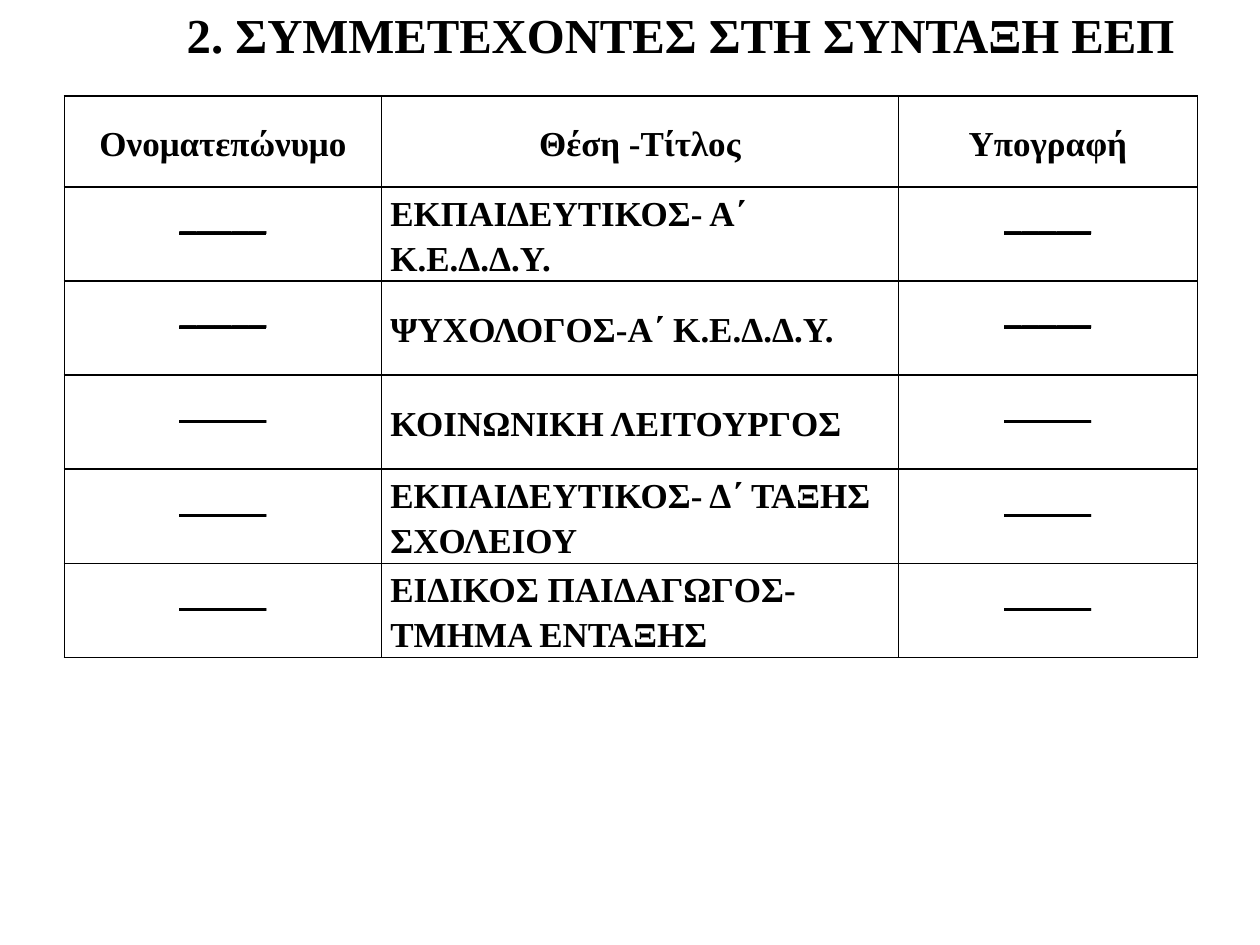
import pptx
import pptx.dml.color
import pptx.enum.text
import pptx.oxml
import pptx.util
from pptx.oxml.ns import nsdecls

Pt = pptx.util.Pt
TEXT = pptx.enum.text
COLORS = {"ink": "000000"}
SERIF = {"name": "Times New Roman", "size": Pt(20), "bold": True}
LINE = {"name": "Calibri", "size": Pt(20), "bold": True, "underline": True}
BLANK = "_____"
HEADS = ["Ονοματεπώνυμο", "Θέση -Τίτλος", "Υπογραφή"]
ROLES = [
    "ΕΚΠΑΙΔΕΥΤΙΚΟΣ- Α΄ Κ.Ε.Δ.Δ.Υ.",
    "ΨΥΧΟΛΟΓΟΣ-Α΄ Κ.Ε.Δ.Δ.Υ.",
    "ΚΟΙΝΩΝΙΚΗ ΛΕΙΤΟΥΡΓΟΣ",
    "ΕΚΠΑΙΔΕΥΤΙΚΟΣ- Δ΄ ΤΑΞΗΣ ΣΧΟΛΕΙΟΥ",
    "ΕΙΔΙΚΟΣ ΠΑΙΔΑΓΩΓΟΣ-ΤΜΗΜΑ ΕΝΤΑΞΗΣ",
]


def assign(item, values):
    for key, value in values.items():
        setattr(item, key, value)


def write(par, text, font, align):
    run = par.add_run()
    run.text = text
    par.alignment = align
    assign(run.font, font)
    run.font.color.rgb = pptx.dml.color.RGBColor.from_string(COLORS["ink"])


def add_title(slide, left, top, width, height):
    title = slide.shapes.title
    assign(title, {"left": Pt(left), "top": Pt(top),
                   "width": Pt(width), "height": Pt(height)})
    frame = title.text_frame
    assign(frame, {"margin_top": 0, "margin_bottom": Pt(10), "word_wrap": True,
                   "vertical_anchor": TEXT.MSO_ANCHOR.MIDDLE})
    par = frame.paragraphs[0]
    props = par._p.get_or_add_pPr()
    props.set("marL", str(Pt(58)))
    props.set("indent", "0")
    write(par, "2. ΣΥΜΜΕΤΕΧΟΝΤΕΣ ΣΤΗ ΣΥΝΤΑΞΗ ΕΕΠ",
          {**SERIF, "size": Pt(27.9)}, TEXT.PP_ALIGN.CENTER)


def add_edges(cell):
    props = cell._tc.get_or_add_tcPr()
    for side in ("lnL", "lnR", "lnT", "lnB"):
        props.append(pptx.oxml.parse_xml(
            f'<a:{side} {nsdecls("a")} w="{Pt(1)}"><a:solidFill>'
            f'<a:srgbClr val="{COLORS["ink"]}"/></a:solidFill></a:{side}>'))


def fill_cell(cell, text, font, align):
    add_edges(cell)
    cell.fill.background()
    # Signature lines sit above the middle of their row.
    lift = Pt(22) if text == BLANK else 0
    assign(cell, {"margin_left": Pt(5), "margin_right": Pt(5), "margin_top": 0,
                  "margin_bottom": lift,
                  "vertical_anchor": TEXT.MSO_ANCHOR.MIDDLE})
    par = cell.text_frame.paragraphs[0]
    par.line_spacing = 1.15
    write(par, text, font, align)


def add_roster(slide, left, top, width, height):
    """Place the table of members, with the header row slightly lower."""
    rows = [HEADS] + [[BLANK, role, BLANK] for role in ROLES]
    table = slide.shapes.add_table(len(rows), len(HEADS), Pt(left), Pt(top),
                                   Pt(width), Pt(height)).table
    assign(table, {"first_row": False, "horz_banding": False})
    for col, share in zip(table.columns, (0.28, 0.456, 0.264)):
        col.width = Pt(width * share)
    head = 52
    for r, texts in enumerate(rows):
        table.rows[r].height = Pt((height - head) / len(ROLES) if r else head)
        for c, text in enumerate(texts):
            role = r > 0 and c == 1
            align = TEXT.PP_ALIGN.LEFT if role else TEXT.PP_ALIGN.CENTER
            fill_cell(table.cell(r, c), text,
                      LINE if text == BLANK else SERIF, align)


def main():
    deck = pptx.Presentation()
    assign(deck, {"slide_width": Pt(720), "slide_height": Pt(540)})
    slide = deck.slides.add_slide(deck.slide_layouts[5])
    add_title(slide, 36, 0, 648, 49)
    add_roster(slide, 36.8, 54.8, 647.5, 321)
    deck.save("out.pptx")


if __name__ == "__main__":
    main()
